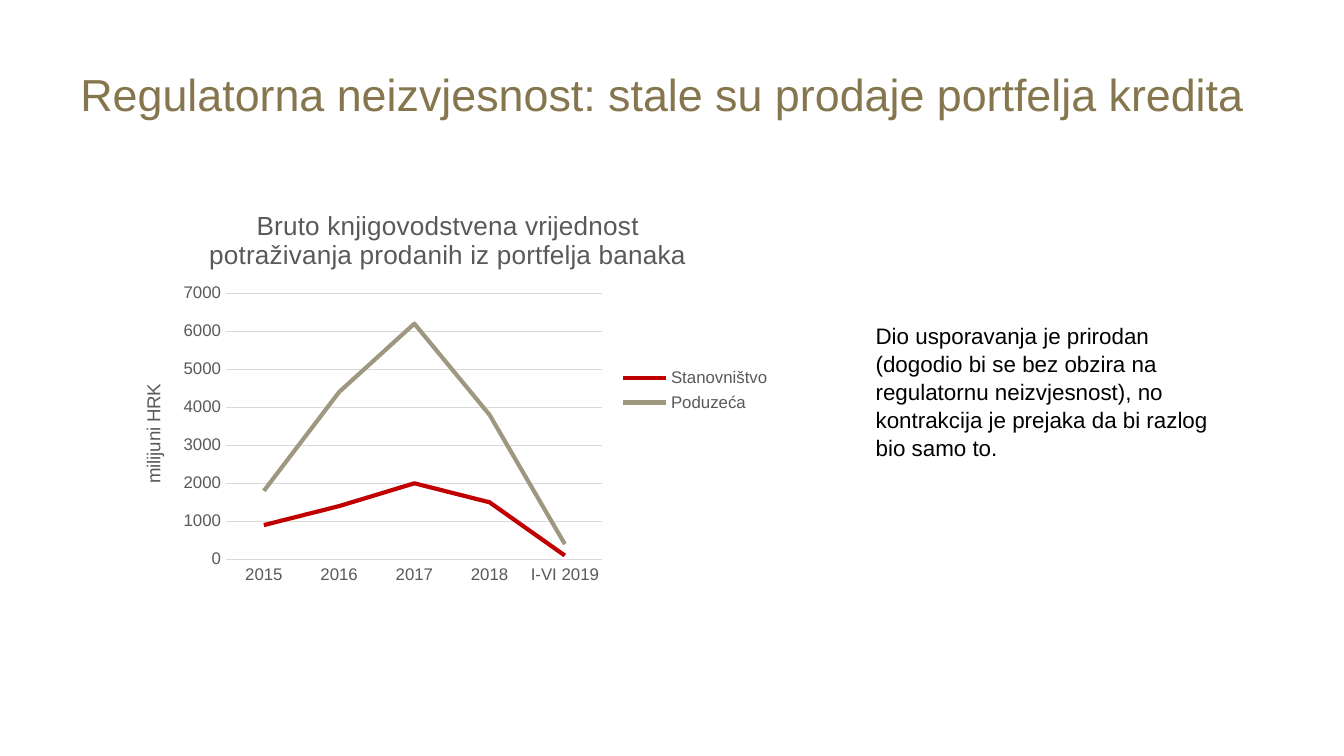
from lxml import etree
from pptx import Presentation
from pptx.chart.data import CategoryChartData
from pptx.dml.color import RGBColor
from pptx.enum.chart import XL_CHART_TYPE, XL_LEGEND_POSITION, XL_MARKER_STYLE, XL_TICK_MARK
from pptx.enum.text import MSO_ANCHOR
from pptx.oxml.ns import qn
from pptx.util import Pt

FONT = "Arial"
HUES = {"gold": "85764D", "black": "000000", "gray": "595959",
        "grid": "D9D9D9", "red": "C00000", "sand": "A09781"}
YEARS = ["2015", "2016", "2017", "2018", "I-VI 2019"]
SALES = [("Stanovništvo", "red", [900, 1400, 2000, 1500, 100]),
         ("Poduzeća", "sand", [1800, 4400, 6200, 3800, 400])]


class Slide:
    def __init__(self, deck):
        self.page = deck.slides.add_slide(deck.slide_layouts[6])

    def style(self, font, size, hue):
        font.name, font.size, font.bold = FONT, Pt(size), False
        font.color.rgb = RGBColor.from_string(HUES[hue])

    def stroke(self, line, hue, width):
        line.color.rgb = RGBColor.from_string(HUES[hue])
        line.width = Pt(width)

    def text(self, words, box, size, hue, anchor=MSO_ANCHOR.TOP, space=1.0):
        frame = self.page.shapes.add_textbox(*map(Pt, box)).text_frame
        frame.word_wrap = True
        frame.vertical_anchor = anchor
        frame.text = words
        para = frame.paragraphs[0]
        para.line_spacing = space
        self.style(para.runs[0].font, size, hue)

    def label(self, owner, words, size):
        frame = owner.text_frame
        frame.text = words
        self.style(frame.paragraphs[0].runs[0].font, size, "gray")

    def place(self, chart, area):
        """Fix the inner plot area, as fractions of the chart."""
        plot = chart.plots[0]._element.getparent()
        for old in plot.findall(qn("c:layout")):
            plot.remove(old)
        layout = etree.Element(qn("c:layout"))
        plot.insert(0, layout)
        manual = etree.SubElement(layout, qn("c:manualLayout"))
        parts = [("layoutTarget", "inner"), ("xMode", "edge"), ("yMode", "edge")]
        for tag, val in parts + list(zip("xywh", area)):
            etree.SubElement(manual, qn("c:" + tag)).set("val", str(val))

    def chart(self, title, unit, box, area):
        data = CategoryChartData()
        data.categories = YEARS
        for name, _, vals in SALES:
            data.add_series(name, vals)
        chart = self.page.shapes.add_chart(
            XL_CHART_TYPE.LINE, *map(Pt, box), data).chart
        self.style(chart.font, 10, "black")
        self.label(chart.chart_title, title, 14)
        chart.chart_title.include_in_layout = False
        chart.has_legend = True
        chart.legend.position = XL_LEGEND_POSITION.RIGHT
        chart.legend.include_in_layout = False
        self.style(chart.legend.font, 9, "gray")

        cats, vals = chart.category_axis, chart.value_axis
        for axis in (cats, vals):
            axis.major_tick_mark = axis.minor_tick_mark = XL_TICK_MARK.NONE
            self.style(axis.tick_labels.font, 9, "gray")
        self.stroke(cats.format.line, "grid", 0.75)
        vals.format.line.fill.background()
        self.stroke(vals.major_gridlines.format.line, "grid", 0.75)
        vals.minimum_scale, vals.maximum_scale, vals.major_unit = 0, 7000, 1000
        self.label(vals.axis_title, unit, 10)

        plot = chart.plots[0]
        plot.vary_by_categories = False
        for series, (_, hue, _) in zip(plot.series, SALES):
            series.smooth = False
            series.marker.style = XL_MARKER_STYLE.NONE
            self.stroke(series.format.line, hue, 2.25)
        self.place(chart, area)


def main():
    deck = Presentation()
    deck.slide_width, deck.slide_height = Pt(720), Pt(405)
    slide = Slide(deck)
    slide.text("Regulatorna neizvjesnost: stale su prodaje portfelja kredita",
               (36, 16.5, 648, 67.5), 24, "gold", MSO_ANCHOR.MIDDLE)
    slide.chart("Bruto knjigovodstvena vrijednost potraživanja prodanih iz portfelja banaka",
                "milijuni HRK", (60, 101, 360, 216), (0.17, 0.26, 0.56, 0.66))
    slide.text("Dio usporavanja je prirodan (dogodio bi se bez obzira na "
               "regulatornu neizvjesnost), no kontrakcija je prejaka da bi "
               "razlog bio samo to.",
               (462, 168.5, 209.5, 80), 12, "black", space=1.04)
    deck.save("out.pptx")


if __name__ == "__main__":
    main()
